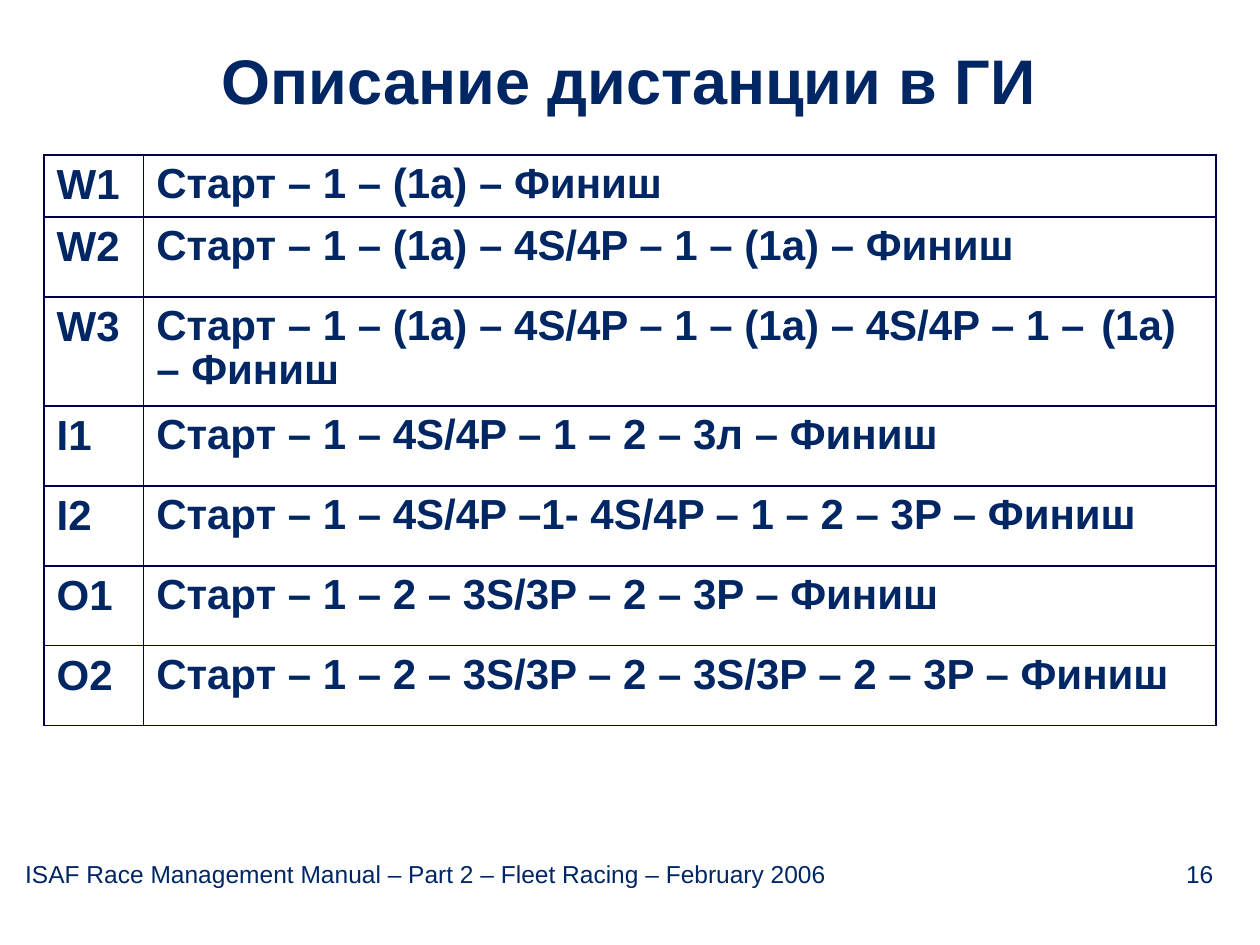
from lxml.etree import SubElement
from pptx import Presentation
from pptx.dml.color import RGBColor
from pptx.enum.text import MSO_ANCHOR, PP_ALIGN
from pptx.oxml.ns import qn
from pptx.util import Pt

NAVY = RGBColor(0x00, 0x26, 0x64)
BORDER = RGBColor(0x00, 0x00, 0x4C)
WHITE = RGBColor(0xFF, 0xFF, 0xFF)

COURSES = [
    ("W1", "Старт – 1 – (1a) – Финиш", 33.9),
    ("W2", "Старт – 1 – (1a) – 4S/4P – 1 – (1a) – Финиш", 45.7),
    ("W3", "Старт – 1 – (1a) – 4S/4P – 1 – (1a) – 4S/4P – 1 – \t(1a) – Финиш", 58.9),
    ("I1", "Старт – 1 – 4S/4P – 1 – 2 – 3л – Финиш", 45.7),
    ("I2", "Старт – 1 – 4S/4P –1- 4S/4P – 1 – 2 – 3P – Финиш", 45.7),
    ("O1", "Старт – 1 – 2 – 3S/3P – 2 – 3P – Финиш", 45.7),
    ("O2", "Старт – 1 – 2 – 3S/3P – 2 – 3S/3P – 2 – 3P – Финиш", 45.7),
]
COURSE_TABS = [(73.73 * step, "l") for step in range(8)]


def write_text(frame, text, size, bold=False, align=PP_ALIGN.LEFT, line_spacing=None,
               space_after=None, tabs=(), margins=(0, 0, 0, 0), anchor=MSO_ANCHOR.TOP):
    """Write one formatted paragraph into a text frame."""
    frame.word_wrap = True
    frame.vertical_anchor = anchor
    frame.margin_left, frame.margin_top, frame.margin_right, frame.margin_bottom = map(Pt, margins)
    paragraph = frame.paragraphs[0]
    paragraph.alignment = align
    paragraph.line_spacing = line_spacing
    if space_after is not None:
        paragraph.space_after = Pt(space_after)
    if tabs:
        tab_list = SubElement(paragraph._p.get_or_add_pPr(), qn("a:tabLst"))
        for position, side in tabs:
            SubElement(tab_list, qn("a:tab"), pos=str(Pt(position)), algn=side)
    run = paragraph.add_run()
    run.text = text
    run.font.name = "Arial"
    run.font.size = Pt(size)
    run.font.bold = bold
    run.font.color.rgb = NAVY


def add_borders(cell):
    """Draw a thin line on all four sides of a cell."""
    properties = cell._tc.get_or_add_tcPr()
    for index, side in enumerate(("lnL", "lnR", "lnT", "lnB")):
        line = properties.makeelement(qn(f"a:{side}"), {"w": str(Pt(1))})
        properties.insert(index, line)
        fill = SubElement(line, qn("a:solidFill"))
        SubElement(fill, qn("a:srgbClr"), val=str(BORDER))


def add_title(slide, left, top, width, height):
    """Add the centred slide title."""
    box = slide.shapes.add_textbox(Pt(left), Pt(top), Pt(width), Pt(height))
    write_text(box.text_frame, "Описание дистанции в ГИ", size=36, bold=True,
               align=PP_ALIGN.CENTER, anchor=MSO_ANCHOR.MIDDLE)


def add_course_table(slide, left, top, width, code_width):
    """Add the table of course codes and their mark sequences."""
    height = sum(row_height for _, _, row_height in COURSES)
    frame = slide.shapes.add_table(len(COURSES), 2, Pt(left), Pt(top), Pt(width), Pt(height))
    table = frame.table
    table.first_row = table.horz_banding = False
    table.columns[0].width = Pt(code_width)
    table.columns[1].width = Pt(width - code_width)
    for row, (code, sequence, row_height) in enumerate(COURSES):
        table.rows[row].height = Pt(row_height)
        code_cell, sequence_cell = table.cell(row, 0), table.cell(row, 1)
        write_cell(code_cell, code, space_after=9.6, margins=(7.2, 3.6, 7.2, 2.5))
        write_cell(sequence_cell, sequence, line_spacing=0.93, space_after=12,
                   tabs=COURSE_TABS, margins=(7.2, 5, 7.2, 3.6))


def write_cell(cell, text, margins, **text_format):
    """Fill, frame and write one table cell."""
    cell.fill.solid()
    cell.fill.fore_color.rgb = WHITE
    add_borders(cell)
    write_text(cell.text_frame, text, size=24, bold=True, **text_format)
    cell.margin_left, cell.margin_top, cell.margin_right, cell.margin_bottom = map(Pt, margins)


def add_footer(slide, left, top, width, height):
    """Add the manual title with the page number at the right."""
    box = slide.shapes.add_textbox(Pt(left), Pt(top), Pt(width), Pt(height))
    write_text(box.text_frame,
               "ISAF Race Management Manual – Part 2 – Fleet Racing – February 2006\t16",
               size=14, tabs=[(679, "r")])


def main():
    """Build and save the presentation."""
    presentation = Presentation()
    presentation.slide_width, presentation.slide_height = Pt(720), Pt(540)
    slide = presentation.slides.add_slide(presentation.slide_layouts[6])
    slide.background.fill.solid()
    slide.background.fill.fore_color.rgb = WHITE
    add_footer(slide, 14.4, 491, 692, 16.6)
    add_title(slide, 19.4, 20.2, 680.4, 50.4)
    add_course_table(slide, 25.2, 88.6, 669.6, 56.9)
    presentation.save("out.pptx")


if __name__ == "__main__":
    main()
